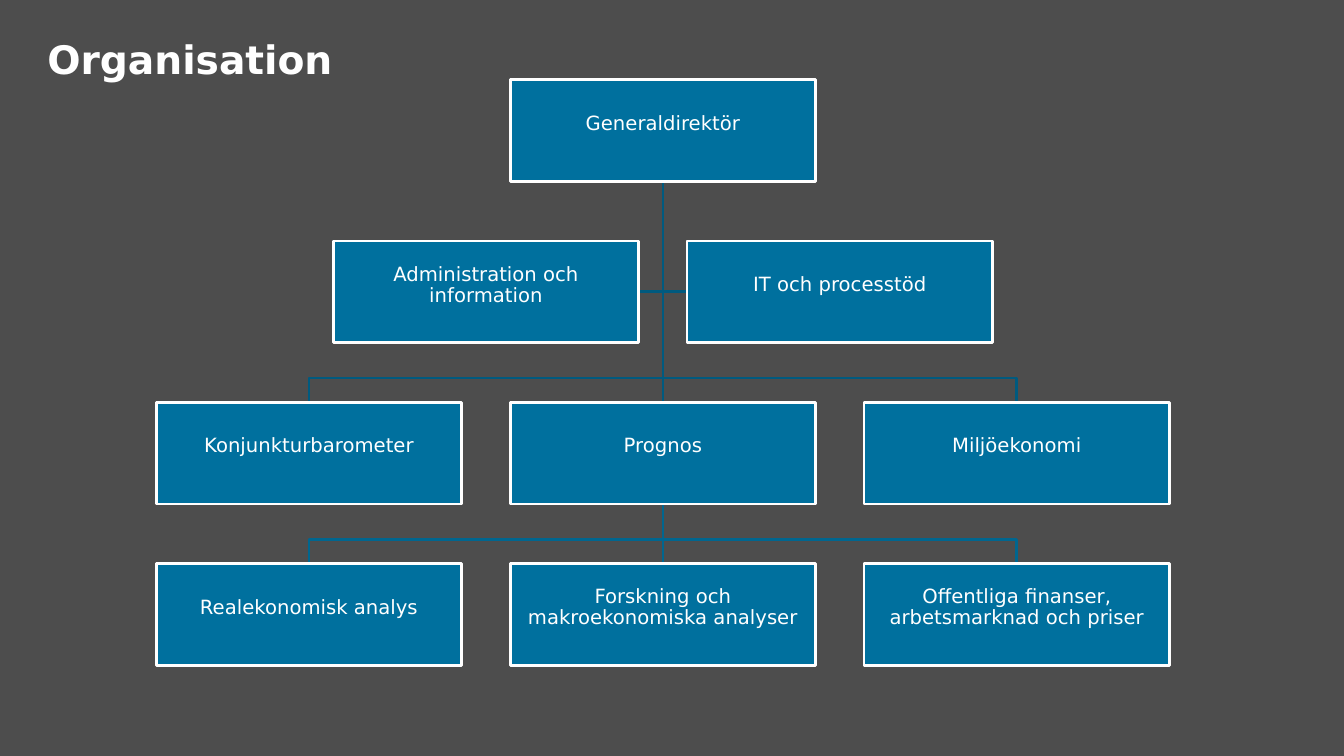
from dataclasses import dataclass

from lxml import etree
from pptx import Presentation
from pptx.dml.color import RGBColor
from pptx.enum.shapes import MSO_CONNECTOR, MSO_SHAPE
from pptx.enum.text import MSO_ANCHOR, PP_ALIGN
from pptx.oxml.ns import qn
from pptx.util import Inches, Pt

RECT = MSO_SHAPE.RECTANGLE
STRAIGHT = MSO_CONNECTOR.STRAIGHT
TOP, MIDDLE = MSO_ANCHOR.TOP, MSO_ANCHOR.MIDDLE
LEFT, CENTER = PP_ALIGN.LEFT, PP_ALIGN.CENTER


@dataclass(frozen=True)
class Theme:
    back: RGBColor = RGBColor(0x4D, 0x4D, 0x4D)
    box: RGBColor = RGBColor(0x00, 0x70, 0x9E)
    upper: RGBColor = RGBColor(0x00, 0x5A, 0x7F)
    lower: RGBColor = RGBColor(0x00, 0x66, 0x8F)
    white: RGBColor = RGBColor(0xFF, 0xFF, 0xFF)
    font: str = "DejaVu Sans"
    title: int = 28
    body: int = 14
    line: int = 2


THEME = Theme()

BOX_W, BOX_H = 3.03, 1.01
COL_STEP, ROW_STEP = 3.51, 1.6
BUS_GAP = 0.24  # from the shared line down to the boxes below it

# (column, row, label); the staff boxes sit halfway between columns
BOSS = (1, 0, "Generaldirektör")
STAFF = [(0.5, 1, "Administration och information"),
         (1.5, 1, "IT och processtöd")]
UNITS = [(0, 2, "Konjunkturbarometer"), (1, 2, "Prognos"),
         (2, 2, "Miljöekonomi")]
TEAMS = [(0, 3, "Realekonomisk analys"),
         (1, 3, "Forskning och makroekonomiska analyser"),
         (2, 3, "Offentliga finanser, arbetsmarknad och priser")]


def set_all(target, values):
    for name, value in values.items():
        setattr(target, name, value)


def write(shape, text, size, bold, align, frame_format):
    frame = shape.text_frame
    set_all(frame, {"word_wrap": True, **frame_format})
    frame.text = text
    para = frame.paragraphs[0]
    para.alignment = align
    set_all(para.font, {"name": THEME.font, "size": Pt(size), "bold": bold})
    para.font.color.rgb = THEME.white
    return para


def add_title(slide, text, left, top, width, height):
    title = slide.shapes.title
    set_all(title, {"left": Inches(left), "top": Inches(top),
                    "width": Inches(width), "height": Inches(height)})
    write(title, text, THEME.title, True, LEFT, {"vertical_anchor": TOP})


def set_line(shape, color):
    shape.line.color.rgb = color
    shape.line.width = Pt(THEME.line)


def add_box(slide, left, top, col, row, label):
    box = slide.shapes.add_shape(
        RECT, Inches(left + col * COL_STEP), Inches(top + row * ROW_STEP),
        Inches(BOX_W), Inches(BOX_H))
    box.shadow.inherit = False
    box.fill.solid()
    box.fill.fore_color.rgb = THEME.box
    set_line(box, THEME.white)
    pad = Inches(0.01)
    para = write(box, label, THEME.body, False, CENTER, {
        "vertical_anchor": MIDDLE, "margin_left": pad, "margin_right": pad,
        "margin_top": pad, "margin_bottom": Inches(0.14)})
    para.line_spacing = 0.9
    return box


def send_back(slide, shape):
    slide.shapes._spTree.insert(2, shape._element)


def mid_x(box):
    return box.left + box.width // 2


def add_bend(slide, points, color):
    """Draw an open, angled line through the points."""
    path = slide.shapes.build_freeform(*points[0])
    path.add_line_segments(points[1:], close=False)
    bend = path.convert_to_shape()
    bend.shadow.inherit = False
    bend.fill.background()
    set_line(bend, color)
    send_back(slide, bend)


def join_down(slide, boss, child, color):
    start, end = mid_x(boss), mid_x(child)
    low = boss.top + boss.height
    if start == end:
        line = slide.shapes.add_connector(STRAIGHT, start, low, end, child.top)
        line.begin_connect(boss, 2)
        line.end_connect(child, 0)
        set_line(line, color)
        etree.SubElement(line._element.spPr, qn("a:effectLst"))
        send_back(slide, line)
    else:
        bus = child.top - Inches(BUS_GAP)
        add_bend(slide, [(start, low), (start, bus), (end, bus),
                         (end, child.top)], color)


def join_side(slide, boss, staff, color):
    """Run a line down from the boss and out to the near side of a staff box."""
    x, y = mid_x(boss), staff.top + staff.height // 2
    edge = staff.left if staff.left > x else staff.left + staff.width
    add_bend(slide, [(x, boss.top + boss.height), (x, y), (edge, y)], color)


def add_chart(slide, left, top):
    boss = add_box(slide, left, top, *BOSS)
    staff, units, teams = (
        [add_box(slide, left, top, *item) for item in group]
        for group in (STAFF, UNITS, TEAMS))
    for box in staff:
        join_side(slide, boss, box, THEME.upper)
    for box in units:
        join_down(slide, boss, box, THEME.upper)
    for box in teams:
        join_down(slide, units[1], box, THEME.lower)


def main():
    deck = Presentation()
    deck.slide_width, deck.slide_height = Inches(13.33), Inches(7.5)
    slide = deck.slides.add_slide(deck.slide_layouts[5])
    slide.background.fill.solid()
    slide.background.fill.fore_color.rgb = THEME.back
    add_title(slide, "Organisation", 0.37, 0.3, 9.23, 1.02)
    add_chart(slide, 1.55, 0.79)
    deck.save("out.pptx")


if __name__ == "__main__":
    main()
